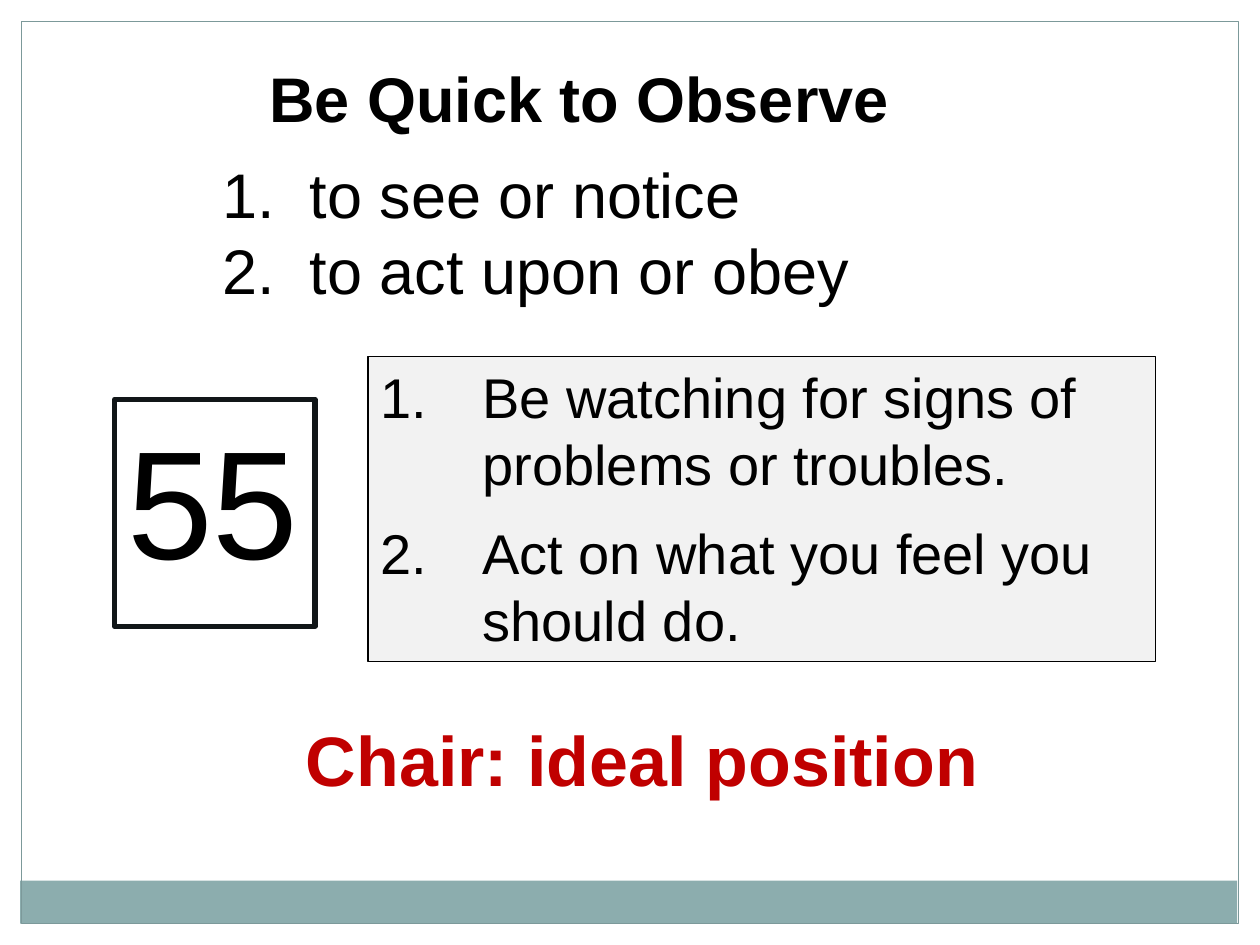
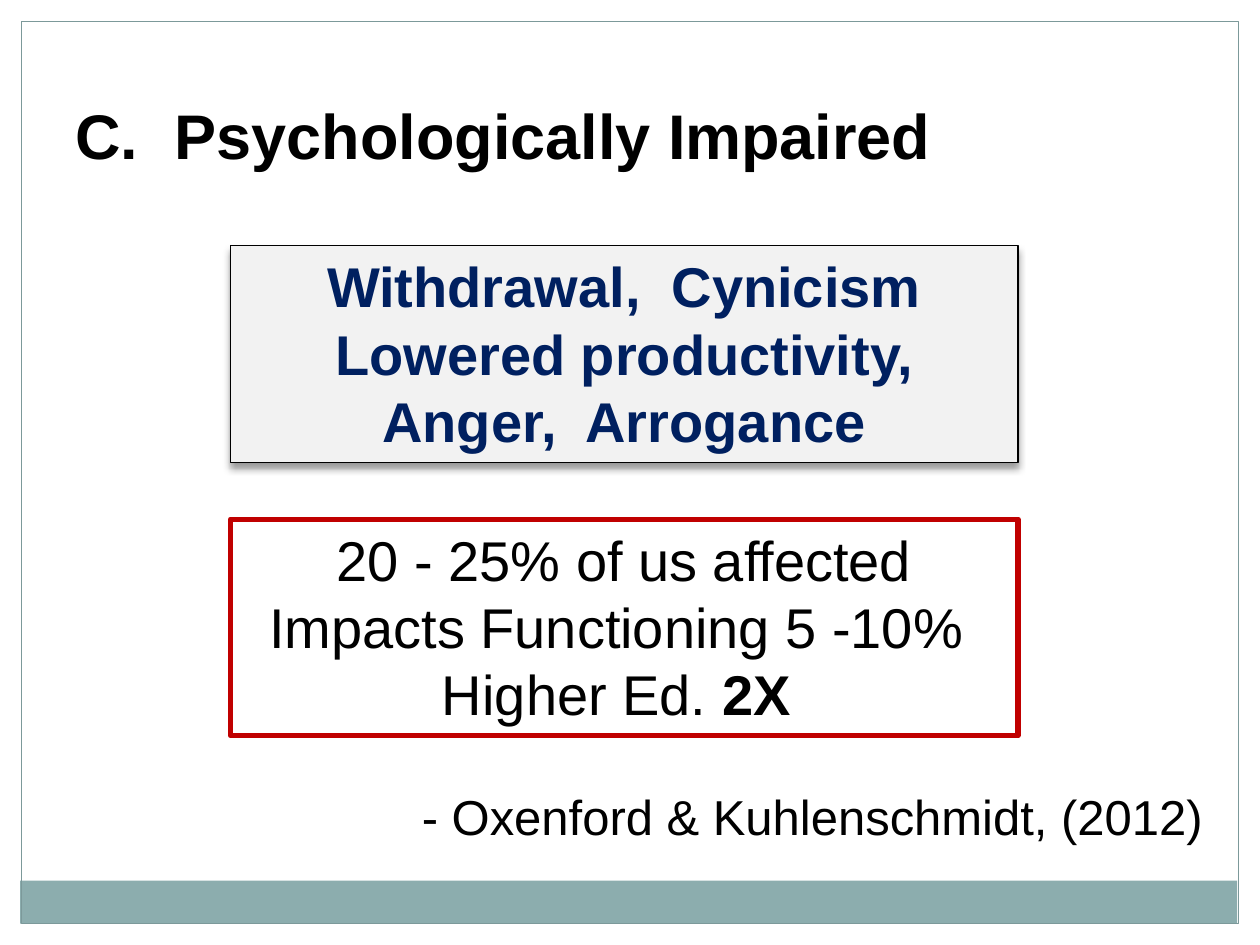
from dataclasses import dataclass, field
from typing import Any, Optional

from lxml import etree
from pptx import Presentation
from pptx.dml.color import RGBColor
from pptx.enum.shapes import MSO_SHAPE as Preset
from pptx.enum.text import MSO_ANCHOR as Anchor, MSO_AUTO_SIZE as AutoSize, PP_ALIGN as Align
from pptx.oxml.ns import qn
from pptx.util import Inches, Pt

COLORS = {
    "black": "000000",
    "white": "FFFFFF",
    "band": "8CADAE",
    "frame": "7C999A",
    "number": "111618",
    "panel": "F2F2F2",
    "red": "C00000",
    "navy": "002060",
}
FONT = "Arial"
TITLE = {"size": Pt(36), "bold": True}
BODY = {"size": Pt(32), "bold": False}
GAP = 12  # points between separated paragraphs


def rgb(name: str) -> RGBColor:
    return RGBColor.from_string(COLORS[name])


@dataclass
class Line:
    """One paragraph; indent and hang are in inches, spacing in points."""
    text: str
    font: dict[str, Any] = field(default_factory=lambda: BODY)
    color: str = "black"
    align: Align = Align.LEFT
    before: float = 0
    after: float = 0
    indent: float = 0
    hang: float = 0
    numbering: str = ""
    start: int = 1
    bold_tail: str = ""


@dataclass
class Box:
    """A rectangle with optional text; place is left, top, width, height."""
    place: tuple[float, float, float, float]
    lines: list[Line] = field(default_factory=list)
    fill: Optional[str] = None
    border: Optional[str] = None
    weight: float = 0.75
    shadow: bool = False
    wrap: bool = True


def add_number(paragraph, line: Line) -> None:
    bullet = etree.SubElement(paragraph._p.get_or_add_pPr(), qn("a:buAutoNum"))
    bullet.set("type", line.numbering)
    if line.start > 1:
        bullet.set("startAt", str(line.start))


def add_shadow(shape) -> None:
    effects = shape._element.spPr.find(qn("a:effectLst"))
    outer = etree.SubElement(effects, qn("a:outerShdw"), blurRad=str(Pt(4)),
                             dist=str(Pt(3)), dir="5400000", rotWithShape="0")
    tint = etree.SubElement(outer, qn("a:srgbClr"), val=COLORS["black"])
    etree.SubElement(tint, qn("a:alpha"), val="40000")


def write_line(paragraph, line: Line) -> None:
    layout = {"alignment": line.align, "space_before": Pt(line.before),
              "space_after": Pt(line.after)}
    for name, value in layout.items():
        setattr(paragraph, name, value)
    if line.indent:
        properties = paragraph._p.get_or_add_pPr()
        properties.set("marL", str(Inches(line.indent)))
        properties.set("indent", str(Inches(-line.hang)))
    if line.numbering:
        add_number(paragraph, line)
    pieces = [(line.text, line.font)]
    if line.bold_tail:
        pieces.append((line.bold_tail, line.font | {"bold": True}))
    for text, font in pieces:
        run = paragraph.add_run()
        run.text = text
        for name, value in ({"name": FONT} | font).items():
            setattr(run.font, name, value)
        run.font.color.rgb = rgb(line.color)


def write_lines(frame, box: Box) -> None:
    settings = {"word_wrap": box.wrap, "vertical_anchor": Anchor.TOP,
                "auto_size": AutoSize.SHAPE_TO_FIT_TEXT}
    for name, value in settings.items():
        setattr(frame, name, value)
    for index, line in enumerate(box.lines):
        write_line(frame.add_paragraph() if index else frame.paragraphs[0], line)


def draw(slide, box: Box) -> None:
    place = [Inches(length) for length in box.place]
    if not (box.fill or box.border):
        write_lines(slide.shapes.add_textbox(*place).text_frame, box)
        return
    shape = slide.shapes.add_shape(Preset.RECTANGLE, *place)
    shape.shadow.inherit = False
    if box.fill:
        shape.fill.solid()
        shape.fill.fore_color.rgb = rgb(box.fill)
    else:
        shape.fill.background()
    if box.border:
        shape.line.color.rgb = rgb(box.border)
        shape.line.width = Pt(box.weight)
    else:
        shape.line.fill.background()
    if box.shadow:
        add_shadow(shape)
    if box.lines:
        write_lines(shape.text_frame, box)


def centered(*texts: str, **style: Any) -> list[Line]:
    return [Line(text, align=Align.CENTER, **style) for text in texts]


def numbered(*texts: str, **style: Any) -> list[Line]:
    return [Line(text, numbering="arabicPeriod", **style) for text in texts]


# Shared by both slides: bottom band and outer frame
BACKDROP = [
    Box((0.16, 6.99, 9.66, 0.34), fill="band"),
    Box((0.17, 0.17, 9.66, 7.16), border="frame"),
]

# Slide 1: heading with two meanings of "observe"
meanings = numbered("to see or notice", "to act upon or obey",
                    font={"size": Pt(36)}, indent=1.69, hang=0.69)
meanings[0].before = GAP
advice = numbered("Be watching for signs of problems or troubles.",
                  "Act on what you feel you should do.", indent=0.81, hang=0.81)
advice[1].before = GAP
OBSERVE = [
    Box((0.91, 3.17, 1.59, 1.8), [Line("55", {"size": Pt(88)}, after=6)],
        fill="white", border="number", weight=3),
    Box((0.67, 0.42, 8.67, 2.86),
        [Line("Be Quick to Observe", TITLE, indent=1.37), *meanings]),
    Box((2.92, 2.83, 6.25, 2.42), advice, fill="panel", border="black", weight=1),
    Box((2.33, 5.64, 5.75, 0.77),
        [Line("Chair: ideal position", {"size": Pt(40), "bold": True}, "red")],
        wrap=False),
]

# Slide 2: symptoms, figures and citation
figures = centered("20 - 25% of us affected", "Impacts Functioning 5 -10% ", "Higher Ed. ")
figures[-1].bold_tail = "2X "
symptoms = centered("Withdrawal,  Cynicism", "Lowered productivity,", "Anger,  Arrogance",
                    font=BODY | {"bold": True}, color="navy")
IMPAIRED = [
    Box((1.83, 4.12, 6.25, 1.72), figures, border="red", weight=3),
    Box((1.83, 1.95, 6.25, 1.72), symptoms, fill="panel", border="black", shadow=True),
    Box((3.25, 6.19, 6.48, 0.57),
        [Line("- Oxenford & Kuhlenschmidt, (2012)", {"size": Pt(28)})], wrap=False),
    Box((0.5, 0.72, 7, 0.71),
        [Line("Psychologically Impaired", TITLE, indent=0.79, hang=0.79,
              numbering="alphaUcPeriod", start=3)]),
]


def main() -> None:
    deck = Presentation()
    deck.slide_width, deck.slide_height = Inches(10), Inches(7.5)
    for content in (OBSERVE, IMPAIRED):
        slide = deck.slides.add_slide(deck.slide_layouts[6])
        for box in BACKDROP + content:
            draw(slide, box)
    deck.save("out.pptx")


if __name__ == "__main__":
    main()
